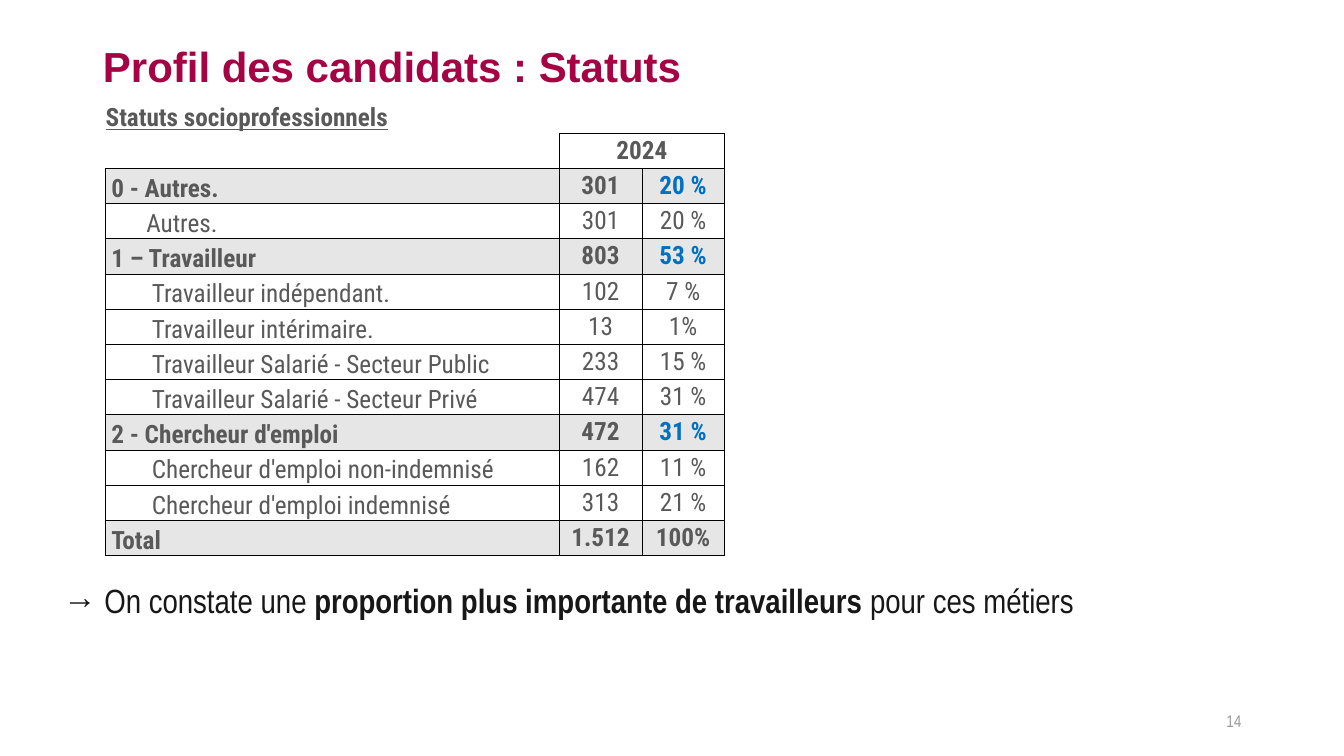
from lxml import etree
from pptx import Presentation
from pptx.dml.color import RGBColor
from pptx.enum.text import MSO_ANCHOR, PP_ALIGN
from pptx.oxml.ns import qn
from pptx.util import Pt

MIDDLE, TOP, BOTTOM = MSO_ANCHOR.MIDDLE, MSO_ANCHOR.TOP, MSO_ANCHOR.BOTTOM
LEFT, CENTER, RIGHT = PP_ALIGN.LEFT, PP_ALIGN.CENTER, PP_ALIGN.RIGHT

CRIMSON = RGBColor(0xA5, 0x03, 0x43)
GREY = RGBColor(0x59, 0x59, 0x59)
BLUE = RGBColor(0x00, 0x70, 0xC0)
BAND = RGBColor(0xE7, 0xE6, 0xE6)
INK = RGBColor(0x18, 0x17, 0x17)
PALE = RGBColor(0x9B, 0x9B, 0x9B)

TITLE = "Profil des candidats : Statuts"
SUBTITLE = "Statuts socioprofessionnels"
YEAR = "2024"
GROUP, DETAIL, TOTAL = "group", "detail", "total"
STATUSES = [
    (GROUP, "0 - Autres.", "301", "20 %"),
    (DETAIL, "Autres.", "301", "20 %"),
    (GROUP, "1 – Travailleur", "803", "53 %"),
    (DETAIL, "Travailleur indépendant.", "102", "7 %"),
    (DETAIL, "Travailleur intérimaire.", "13", "1%"),
    (DETAIL, "Travailleur Salarié - Secteur Public", "233", "15 %"),
    (DETAIL, "Travailleur Salarié - Secteur Privé", "474", "31 %"),
    (GROUP, "2 - Chercheur d'emploi", "472", "31 %"),
    (DETAIL, "Chercheur d'emploi non-indemnisé", "162", "11 %"),
    (DETAIL, "Chercheur d'emploi indemnisé", "313", "21 %"),
    (TOTAL, "Total", "1.512", "100%"),
]
FINDING = [
    ("→ On constate une ", False),
    ("proportion plus importante de travailleurs ", True),
    ("pour ces métiers", False),
]
PAGE = "14"

COLUMN_WIDTHS = (324, 59, 59)
ROW_HEIGHT = 25.15
TABLE_LEFT, TABLE_TOP = 75.5, 70
HEADER_ROWS = 2
INDENTS = {GROUP: 4, DETAIL: 33, TOTAL: 4}


def set_font(font, name, size, color, bold=False):
    font.name, font.size, font.bold = name, Pt(size), bold
    font.color.rgb = color


def add_text(slide, box, runs, font, size, color, align=LEFT, anchor=MIDDLE):
    frame = slide.shapes.add_textbox(*map(Pt, box)).text_frame
    frame.word_wrap = True
    frame.vertical_anchor = anchor
    paragraph = frame.paragraphs[0]
    paragraph.alignment = align
    set_font(paragraph.font, font, size, color)
    for text, bold in runs:
        run = paragraph.add_run()
        run.text = text
        run.font.bold = bold


def set_borders(cell, sides):
    properties = cell._tc.get_or_add_tcPr()
    for side in "LRTB":
        line = etree.SubElement(properties, qn("a:ln" + side), w=str(Pt(0.5)))
        if side in sides:
            fill = etree.SubElement(line, qn("a:solidFill"))
            etree.SubElement(fill, qn("a:srgbClr"), val="000000")
        else:
            etree.SubElement(line, qn("a:noFill"))


def border_sides(row, column):
    if row == 0:
        return "B" if column else ""
    if row == 1 and column == 0:
        return "RB"
    return "LRTB"


def fill_cell(cell, row, column, kind, text):
    set_borders(cell, border_sides(row, column))
    if kind in (GROUP, TOTAL):
        cell.fill.solid()
        cell.fill.fore_color.rgb = BAND
    else:
        cell.fill.background()
    cell.margin_right = cell.margin_top = cell.margin_bottom = 0
    cell.margin_left = Pt(0 if column else INDENTS.get(kind, 0))
    if text == "Autres.":
        cell.margin_left = Pt(29)
    cell.vertical_anchor = MIDDLE if column else BOTTOM
    cell.text = text
    paragraph = cell.text_frame.paragraphs[0]
    paragraph.alignment = CENTER if column else LEFT
    color = BLUE if kind == GROUP and column == 2 else GREY
    set_font(paragraph.font, "Roboto Condensed", 18, color, kind != DETAIL)
    paragraph.font.underline = text == SUBTITLE


def add_statuses(slide):
    rows = [(None, SUBTITLE, "", ""), (None, "", YEAR, "")] + STATUSES
    table = slide.shapes.add_table(
        len(rows), len(COLUMN_WIDTHS), Pt(TABLE_LEFT), Pt(TABLE_TOP),
        Pt(sum(COLUMN_WIDTHS)), Pt(ROW_HEIGHT * len(rows))).table
    table.first_row = table.horz_banding = False
    for column, width in zip(table.columns, COLUMN_WIDTHS):
        column.width = Pt(width)
    for r, (kind, *texts) in enumerate(rows):
        table.rows[r].height = Pt(ROW_HEIGHT)
        for c, text in enumerate(texts):
            fill_cell(table.cell(r, c), r, c, kind, text)
    year_row = HEADER_ROWS - 1
    table.cell(year_row, 1).merge(table.cell(year_row, 2))


def main():
    deck = Presentation()
    deck.slide_width, deck.slide_height = Pt(960), Pt(540)
    slide = deck.slides.add_slide(deck.slide_layouts[6])
    add_text(slide, (66.5, -5, 828, 104), [(TITLE, True)], "Arial", 30, CRIMSON)
    add_statuses(slide)
    add_text(slide, (678, 500.5, 216, 29), [(PAGE, False)],
             "Arial Narrow", 12, PALE, RIGHT)
    add_text(slide, (38, 411, 921.5, 36), FINDING,
             "Arial Narrow", 24, INK, anchor=TOP)
    deck.save("out.pptx")


if __name__ == "__main__":
    main()
